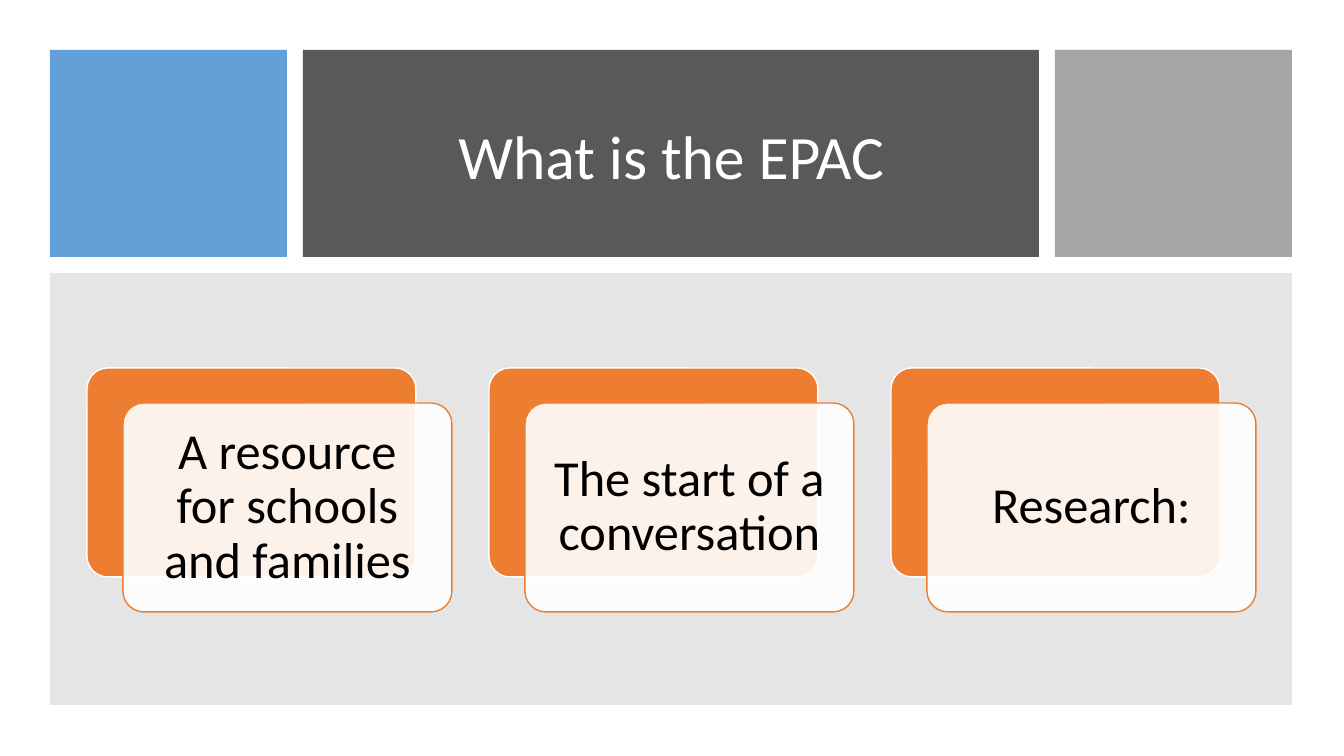
import pptx
import pptx.util
import pptx.dml.color
import pptx.enum.shapes
import pptx.enum.text
import pptx.oxml.ns
import lxml.etree

TITLE = "What is the EPAC"
CARDS = [
    "A resource for schools and families",
    "The start of a conversation",
    "Research:",
]


class Theme:
    font = "Calibri"
    head, body = 44, 36
    white, black = "FFFFFF", "000000"
    blue, dark, grey, panel = "5B9BD5", "595959", "A5A5A5", "808080"
    orange = "ED7D31"


EMU = 914400 / 100.8
EDGE, GAP = 50, 16
WIDE, HIGH = 1344, 756
SIDE, BAND = 237, 207
CARD_W, CARD_H, CARD_Y = 329, 209, 368
STEP, SHIFT_X, SHIFT_Y = 402, 36, 35
KIND = pptx.enum.shapes.MSO_SHAPE


def px(n):
    return pptx.util.Emu(round(n * EMU))


def color(code):
    return pptx.dml.color.RGBColor.from_string(code)


def block(slide, kind, box, fill, alpha=100, line=None):
    """Draw a filled shape; alpha is its opacity in percent."""
    shape = slide.shapes.add_shape(kind, *map(px, box))
    shape.shadow.inherit = False
    shape.fill.solid()
    shape.fill.fore_color.rgb = color(fill)
    if alpha < 100:
        qn = pptx.oxml.ns.qn
        tint = shape.fill._xPr.find(qn("a:solidFill"))[0]
        lxml.etree.SubElement(tint, qn("a:alpha"), val=str(alpha * 1000))
    if line:
        shape.line.color.rgb = color(line)
        shape.line.width = pptx.util.Pt(1)
    else:
        shape.line.fill.background()
    if kind == KIND.ROUNDED_RECTANGLE:
        shape.adjustments[0] = 0.1
    return shape


def write(shape, text, size, ink, inset):
    frame = shape.text_frame
    frame.text = text
    frame.word_wrap = True
    frame.vertical_anchor = pptx.enum.text.MSO_ANCHOR.MIDDLE
    frame.margin_left = frame.margin_right = px(inset)
    frame.margin_top = frame.margin_bottom = px(inset)
    para = frame.paragraphs[0]
    para.alignment = pptx.enum.text.PP_ALIGN.CENTER
    para.line_spacing = 0.9
    font = para.runs[0].font
    font.name = Theme.font
    font.size = pptx.util.Pt(size)
    font.color.rgb = color(ink)


def header(slide):
    mid = WIDE - 2 * (EDGE + SIDE + GAP) - 2
    x = EDGE
    for width, fill, alpha in [
        (SIDE, Theme.blue, 95),
        (mid, Theme.dark, 100),
        (SIDE, Theme.grey, 100),
    ]:
        block(slide, KIND.RECTANGLE, (x, EDGE, width, BAND), fill, alpha)
        x += width + GAP
    title = slide.shapes.add_textbox(px(336), px(81), px(671), px(157))
    write(title, TITLE, Theme.head, Theme.white, 5)


def cards(slide):
    top = EDGE + BAND + GAP
    box = (EDGE, top, WIDE - 2 * EDGE - 2, HIGH - EDGE - top - 1)
    block(slide, KIND.RECTANGLE, box, Theme.panel, 20)
    for i, text in enumerate(CARDS):
        x = 87 + i * STEP
        block(slide, KIND.ROUNDED_RECTANGLE, (x, CARD_Y, CARD_W, CARD_H),
              Theme.orange, line=Theme.white)
        front = block(slide, KIND.ROUNDED_RECTANGLE,
                      (x + SHIFT_X, CARD_Y + SHIFT_Y, CARD_W, CARD_H),
                      Theme.white, 90, Theme.orange)
        write(front, text, Theme.body, Theme.black, 15)


def main():
    deck = pptx.Presentation()
    deck.slide_width, deck.slide_height = px(WIDE), px(HIGH)
    slide = deck.slides.add_slide(deck.slide_layouts[6])
    header(slide)
    cards(slide)
    deck.save("out.pptx")


if __name__ == "__main__":
    main()
